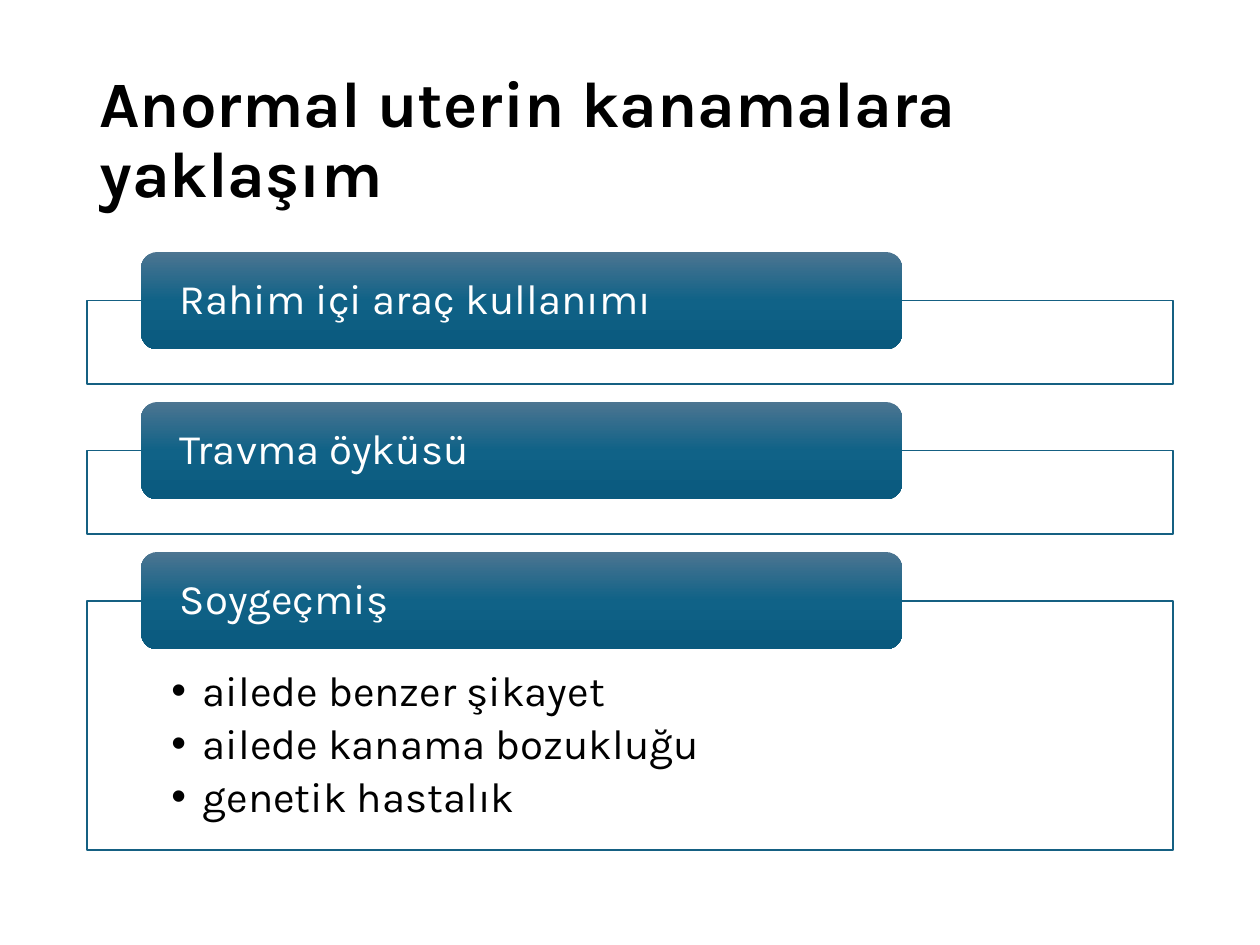
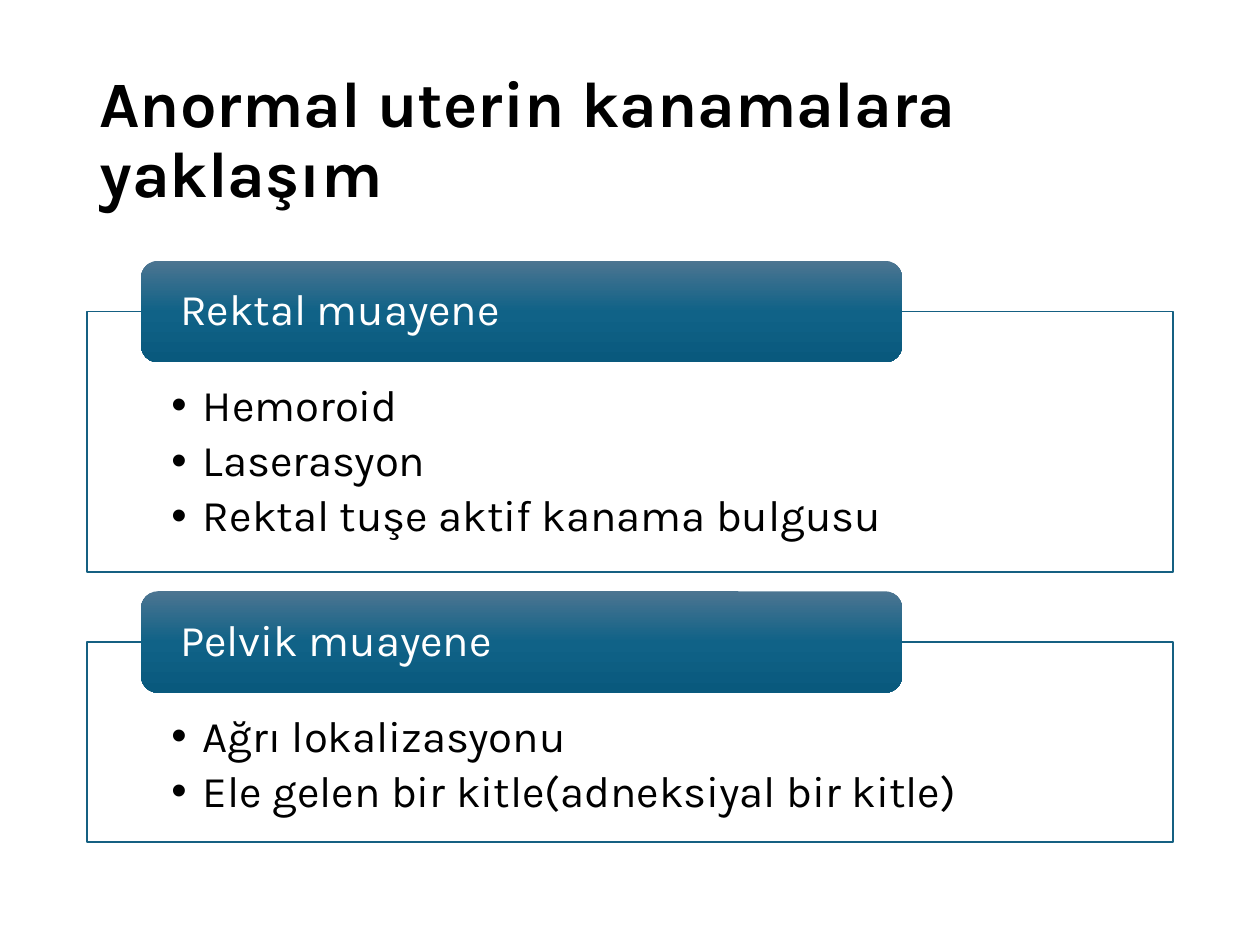
from copy import deepcopy
from dataclasses import dataclass

from lxml import etree
from pptx import Presentation
from pptx.dml.color import RGBColor
from pptx.enum.shapes import MSO_SHAPE
from pptx.enum.text import MSO_ANCHOR, MSO_AUTO_SIZE, PP_ALIGN
from pptx.oxml.ns import qn
from pptx.util import Inches, Pt

RECTANGLE = MSO_SHAPE.RECTANGLE
ROUNDED = MSO_SHAPE.ROUNDED_RECTANGLE
LEFT = PP_ALIGN.LEFT
TOP = MSO_ANCHOR.TOP
MIDDLE = MSO_ANCHOR.MIDDLE
NO_AUTOFIT = MSO_AUTO_SIZE.NONE
TITLE_ONLY = 5


@dataclass(frozen=True)
class Theme:
    font: str = "Karla"
    text: RGBColor = RGBColor(0, 0, 0)
    white: RGBColor = RGBColor(255, 255, 255)
    outline: RGBColor = RGBColor.from_string("156082")
    gradient: tuple = ("4C7591", "106287", "09597D")
    title_size: int = 37
    line_spacing: float = 0.9
    left: float = 0.69
    width: float = 8.62
    label_left: float = 1.12
    label_width: float = 6.04


class Deck:
    def __init__(self, theme):
        self.theme = theme
        self.presentation = Presentation()
        self.presentation.slide_width = Inches(10)
        self.presentation.slide_height = Inches(7.5)
        self.slide = None

    def add_slide(self, title):
        layout = self.presentation.slide_layouts[TITLE_ONLY]
        self.slide = self.presentation.slides.add_slide(layout)
        shape = self.slide.shapes.title
        shape.left, shape.top = Inches(self.theme.left), Inches(0.4)
        shape.width, shape.height = Inches(self.theme.width), Inches(1.45)
        self.set_text(shape, [title], self.theme.title_size, self.theme.text,
                      (0.1, 0.05, 0.1, 0.05), MIDDLE, bold=True)

    def set_text(self, shape, lines, size, color, insets, anchor, bold=False, bullets=False):
        frame = shape.text_frame
        frame.text = "\n".join(lines)
        frame.word_wrap = True
        frame.auto_size = NO_AUTOFIT
        frame.vertical_anchor = anchor
        (frame.margin_left, frame.margin_top,
         frame.margin_right, frame.margin_bottom) = map(Inches, insets)
        for paragraph in frame.paragraphs:
            paragraph.alignment = LEFT
            paragraph.line_spacing = self.theme.line_spacing
            if bullets:
                paragraph.space_after = Pt(0.18 * size)
                self.add_bullet(paragraph)
            font = paragraph.font
            font.name, font.size, font.bold = self.theme.font, Pt(size), bold
            font.color.rgb = color

    def add_bullet(self, paragraph):
        properties = paragraph._p.get_or_add_pPr()
        properties.set("marL", str(Inches(0.25)))
        properties.set("indent", str(Inches(-0.25)))
        etree.SubElement(properties, qn("a:buFont")).set("typeface", "Arial")
        etree.SubElement(properties, qn("a:buChar")).set("char", "•")

    def add_shape(self, kind, left, top, width, height):
        shape = self.slide.shapes.add_shape(
            kind, Inches(left), Inches(top), Inches(width), Inches(height))
        shape.shadow.inherit = False
        return shape

    def add_frame(self, top, height, items, size):
        shape = self.add_shape(RECTANGLE, self.theme.left, top, self.theme.width, height)
        shape.fill.solid()
        shape.fill.fore_color.rgb = self.theme.white
        color = shape._element.spPr.find(qn("a:solidFill"))[0]
        etree.SubElement(color, qn("a:alpha")).set("val", "90000")
        shape.line.color.rgb = self.theme.outline
        shape.line.width = Pt(1)
        if items:
            self.set_text(shape, items, size, self.theme.text,
                          (0.67, 0.023 * size, 0.67, 0.19), TOP, bullets=True)

    def add_label(self, top, height, text, size):
        shape = self.add_shape(ROUNDED, self.theme.label_left, top,
                               self.theme.label_width, height)
        shape.fill.gradient()
        shape.fill.gradient_angle = 270
        stop_list = shape._element.spPr.find(qn("a:gradFill")).find(qn("a:gsLst"))
        stop_list.append(deepcopy(stop_list[-1]))
        for index, (stop, color) in enumerate(
                zip(shape.fill.gradient_stops, self.theme.gradient)):
            stop.position = index / 2
            stop.color.rgb = RGBColor.from_string(color)
        shape.line.fill.background()
        self.set_text(shape, [text], size, self.theme.white, (0.27, 0, 0.27, 0), MIDDLE)

    def add_sections(self, top, size, sections):
        label_height = 0.0322 * size
        gap = 0.006 * size
        for label, frame_height, items in sections:
            frame_top = top + label_height / 2
            self.add_frame(frame_top, frame_height, items, size)
            self.add_label(top, label_height, label, size)
            top = frame_top + frame_height + gap


TITLE = "Anormal uterin kanamalara yaklaşım"
HISTORY = [
    ("Rahim içi araç kullanımı", 0.66, []),
    ("Travma öyküsü", 0.66, []),
    ("Soygeçmiş", 1.98,
     ["ailede benzer şikayet", "ailede kanama bozukluğu", "genetik hastalık"]),
]
EXAMINATION = [
    ("Rektal muayene", 2.07,
     ["Hemoroid", "Laserasyon", "Rektal tuşe aktif kanama bulgusu"]),
    ("Pelvik muayene", 1.59,
     ["Ağrı lokalizasyonu", "Ele gelen bir kitle(adneksiyal bir kitle)"]),
]


def main():
    deck = Deck(Theme())
    for top, size, sections in ((2, 24, HISTORY), (2.07, 25, EXAMINATION)):
        deck.add_slide(TITLE)
        deck.add_sections(top, size, sections)
    deck.presentation.save("out.pptx")


if __name__ == "__main__":
    main()
